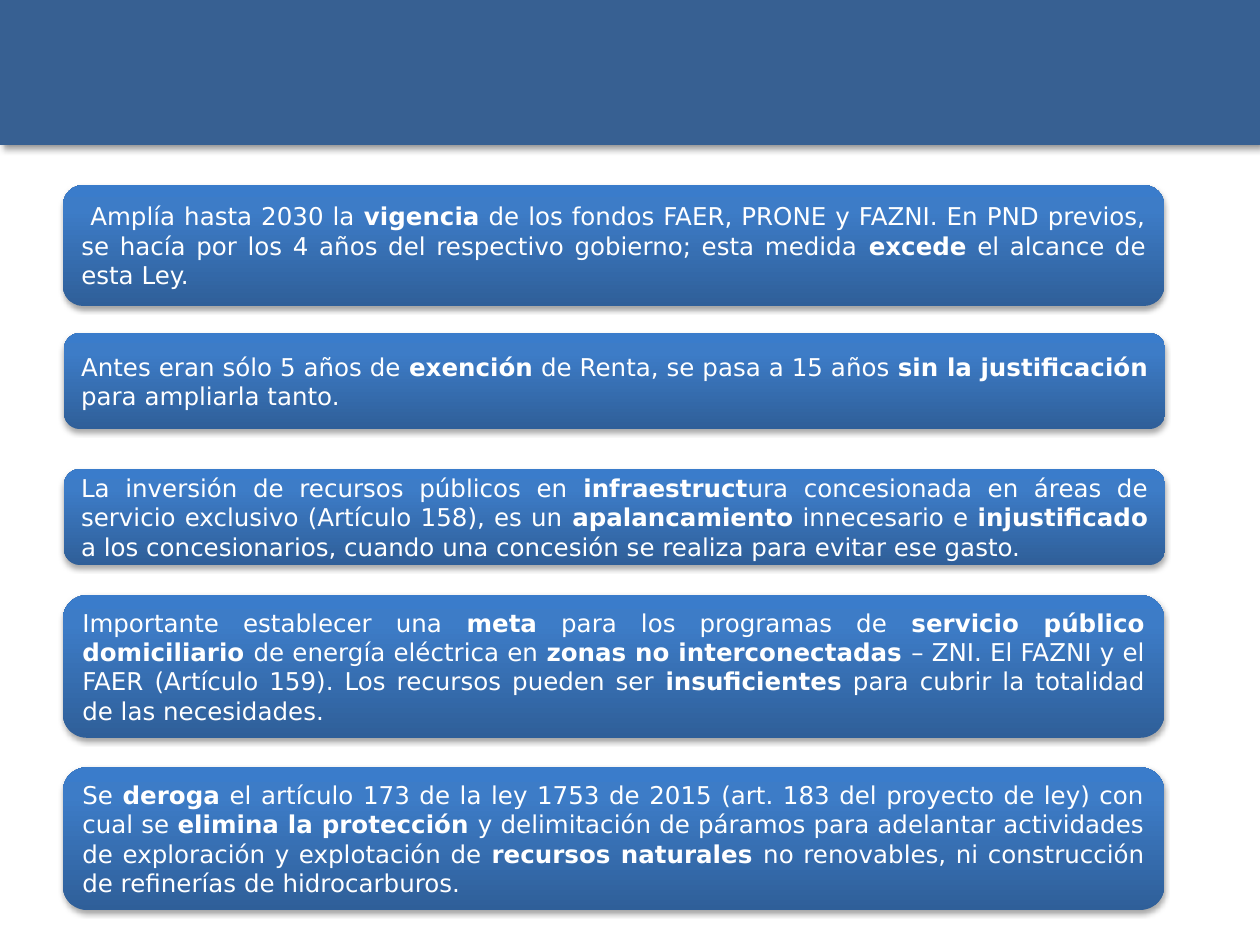
from lxml.etree import SubElement
from pptx import Presentation
from pptx.dml.color import RGBColor
from pptx.enum.shapes import MSO_SHAPE as SHAPE
from pptx.enum.text import MSO_ANCHOR as ANCHOR, PP_ALIGN as ALIGN
from pptx.oxml.ns import qn
from pptx.util import Pt

WIDTH, HEIGHT = 720, 540
CARD_WIDTH = 629.3
GRADIENT = [(0, "2F5F99"), (80, "3D7CC7"), (100, "3A7CCB")]
CARDS = [
    (36, 105.8, 69.1,
     " Amplía hasta 2030 la **vigencia** de los fondos FAER, PRONE y FAZNI. "
     "En PND previos, se hacía por los 4 años del respectivo gobierno; "
     "esta medida **excede** el alcance de esta Ley."),
    (36.6, 190.3, 54.9,
     "Antes eran sólo 5 años de **exención** de Renta, se pasa a 15 años "
     "**sin la justificación **para ampliarla tanto."),
    (36.6, 268, 54.9,
     "La inversión de recursos públicos en **infraestruct**ura concesionada "
     "en áreas de servicio exclusivo (Artículo 158), es un **apalancamiento** "
     "innecesario e **injustificado** a los concesionarios, cuando una "
     "concesión se realiza para evitar ese gasto."),
    (36, 340.1, 81.5,
     "Importante establecer una **meta** para los programas de **servicio "
     "público domiciliario **de energía eléctrica en **zonas no "
     "interconectadas **– ZNI. El FAZNI y el FAER (Artículo 159). Los recursos "
     "pueden ser **insuficientes** para cubrir la totalidad de las necesidades."),
    (36, 438.5, 81.5,
     "Se **deroga** el artículo 173 de la ley 1753 de 2015 (art. 183 del "
     "proyecto de ley) con cual se **elimina la protección **y delimitación "
     "de páramos para adelantar actividades de exploración y explotación de "
     "**recursos naturales **no renovables, ni construcción de refinerías de "
     "hidrocarburos."),
]


def rgb(color):
    """Turn a hex string into a colour."""
    return RGBColor.from_string(color)


def add_color(parent, color):
    """Append a hex colour element to an XML parent."""
    return SubElement(parent, qn("a:srgbClr"), val=color)


def add_shadow(s, alpha, blur, dist, angle):
    """Give a shape a black outer shadow."""
    s.shadow.inherit = False
    effects = s._element.spPr.find(qn("a:effectLst"))
    shadow = SubElement(effects, qn("a:outerShdw"), blurRad=str(Pt(blur)),
                        dist=str(Pt(dist)), dir=str(angle * 60000),
                        rotWithShape="0")
    SubElement(add_color(shadow, "000000"), qn("a:alpha"), val=str(alpha * 1000))


def fill_gradient(s, stops):
    """Fill a shape with a gradient running from bottom to top."""
    s.fill.gradient()
    s.fill.gradient_angle = 90
    stop_list = s._element.spPr.find(".//" + qn("a:gsLst"))
    for old in list(stop_list):
        stop_list.remove(old)
    for pos, color in stops:
        add_color(SubElement(stop_list, qn("a:gs"), pos=str(pos * 1000)), color)


def add_runs(p, text):
    """Write text in which double asterisks switch bold on and off."""
    for i, piece in enumerate(text.split("**")):
        r = p.add_run()
        r.text = piece
        font = {"name": "DejaVu Sans", "size": Pt(14), "bold": i % 2 == 1}
        for key, value in font.items():
            setattr(r.font, key, value)
        r.font.color.rgb = rgb("FFFFFF")


def add_header(slide, x, y, w, h):
    """Draw the plain header band."""
    s = slide.shapes.add_shape(SHAPE.RECTANGLE, Pt(x), Pt(y), Pt(w), Pt(h))
    s.fill.solid()
    s.fill.fore_color.rgb = rgb("376092")
    s.line.fill.background()
    add_shadow(s, 40, 4, 3, 45)


def add_card(slide, x, y, w, h, text):
    """Draw a rounded card with justified text."""
    s = slide.shapes.add_shape(SHAPE.ROUNDED_RECTANGLE, Pt(x), Pt(y), Pt(w), Pt(h))
    fill_gradient(s, GRADIENT)
    s.line.fill.background()
    add_shadow(s, 35, 3.15, 1.8, 90)
    tf = s.text_frame
    tf.word_wrap = True
    tf.vertical_anchor = ANCHOR.MIDDLE
    p = tf.paragraphs[0]
    p.alignment = ALIGN.JUSTIFY
    add_runs(p, text)


def main():
    """Build and save the slide."""
    prs = Presentation()
    prs.slide_width, prs.slide_height = Pt(WIDTH), Pt(HEIGHT)
    slide = prs.slides.add_slide(prs.slide_layouts[6])
    add_header(slide, 0, 0, WIDTH, 82.8)
    for x, y, h, text in CARDS:
        add_card(slide, x, y, CARD_WIDTH, h, text)
    prs.save("out.pptx")


if __name__ == "__main__":
    main()
